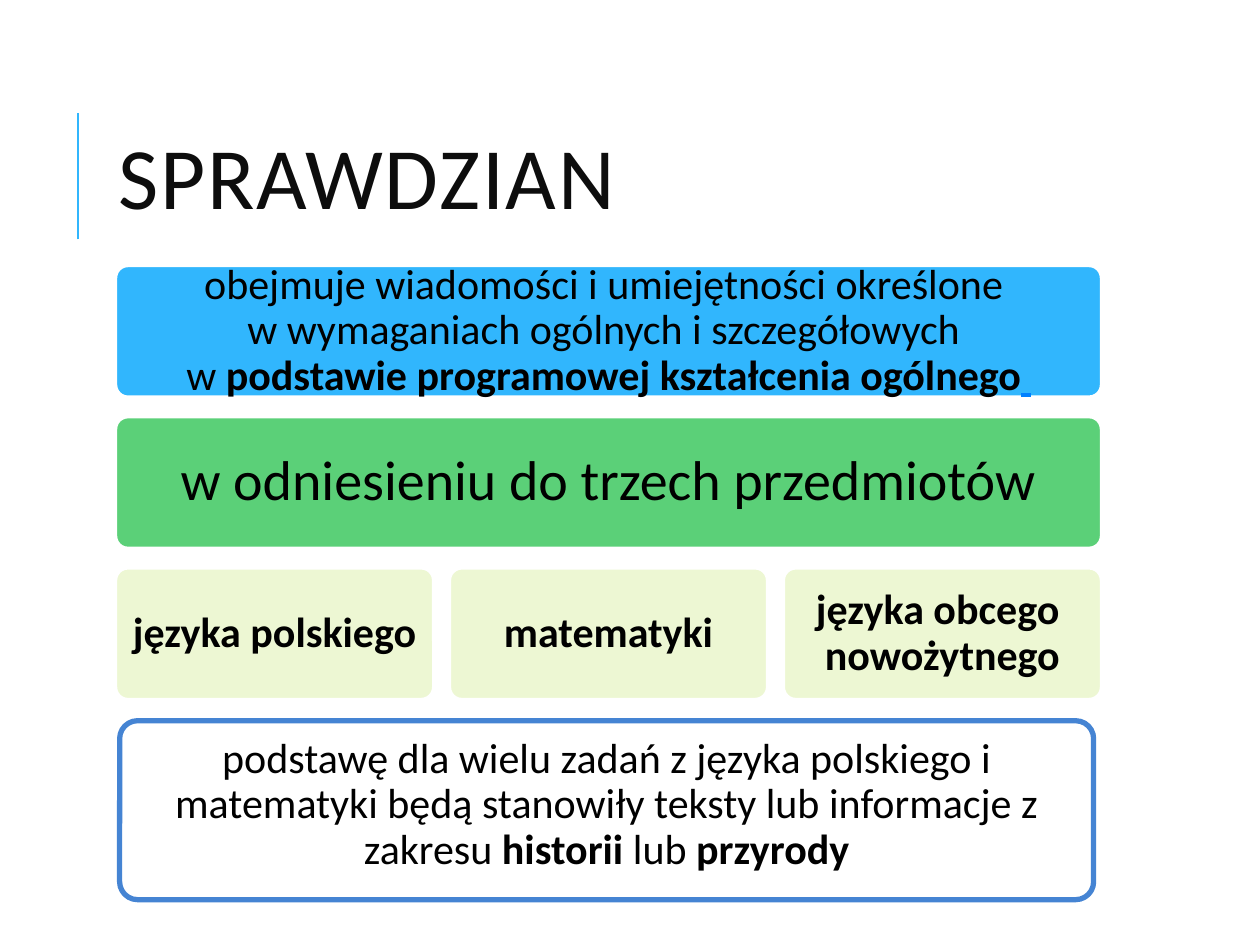
import pptx
import pptx.dml.color
import pptx.enum.shapes
import pptx.enum.text
import pptx.oxml
import pptx.oxml.ns
import pptx.util

COLORS = {
    "accent": "31B6FD", "green": "5BD078", "lime": "EDF7D3", "frame": "4584D3",
    "white": "FFFFFF", "black": "000000", "title": "0D0D0D", "link": "0080FF",
}

# Grid of the cards, in inches
GRID_LEFT, GRID_TOP, GRID_WIDTH = 0.91, 2.1, 7.84
COLUMNS, COLUMN_GAP = 3, 0.11
COLUMN_WIDTH = (GRID_WIDTH - (COLUMNS - 1) * COLUMN_GAP) / COLUMNS
ROW_HEIGHT, ROW_PITCH = 1.06, 1.2


def inches(*lengths):
    return [pptx.util.Inches(length) for length in lengths]


def color(name):
    return pptx.dml.color.RGBColor.from_string(COLORS[name])


def grid_cell(row, column=0, span=1):
    """Return left, top, width and height of a cell."""
    left = GRID_LEFT + column * (COLUMN_WIDTH + COLUMN_GAP)
    width = span * COLUMN_WIDTH + (span - 1) * COLUMN_GAP
    return left, GRID_TOP + row * ROW_PITCH, width, ROW_HEIGHT


def set_attributes(target, values):
    for name, value in values.items():
        setattr(target, name, value)


def add_run(paragraph, text, text_color="black", **font_values):
    run = paragraph.add_run()
    run.text = text
    set_attributes(run.font, {"name": "Calibri", **font_values})
    run.font.color.rgb = color(text_color)
    return run


def prepare_frame(shape, margins):
    """Set up a wrapped, vertically centred frame; margins: left, top, right, bottom."""
    names = ("margin_left", "margin_top", "margin_right", "margin_bottom")
    set_attributes(shape.text_frame, {
        "word_wrap": True,
        "vertical_anchor": pptx.enum.text.MSO_ANCHOR.MIDDLE,
        **dict(zip(names, inches(*margins))),
    })
    return shape.text_frame.paragraphs[0]


def add_card(slide, box, fill, lines, size=24, margins=(0.1,) * 4, border="white"):
    """Add a rounded card; each line is a list of (text, run format) pairs."""
    shape = slide.shapes.add_shape(
        pptx.enum.shapes.MSO_SHAPE.ROUNDED_RECTANGLE, *inches(*box))
    shape.adjustments[0] = 0.1
    shape.shadow.inherit = False
    shape.fill.solid()
    shape.fill.fore_color.rgb = color(fill)
    shape.line.color.rgb = color(border)
    shape.line.width = pptx.util.Pt(3)

    paragraph = prepare_frame(shape, margins)
    set_attributes(paragraph, {
        "alignment": pptx.enum.text.PP_ALIGN.CENTER, "line_spacing": 0.9})
    for index, line in enumerate(lines):
        if index:
            paragraph.add_line_break()
        for text, run_format in line:
            add_run(paragraph, text, size=pptx.util.Pt(size), **run_format)


def add_title(slide, text):
    # Accent line beside the title
    line = slide.shapes.add_connector(
        pptx.enum.shapes.MSO_CONNECTOR.STRAIGHT, *inches(0.62, 1.9, 0.62, 0.9))
    line.line.color.rgb = color("accent")
    line.line.width = pptx.util.Pt(1.5)
    line._element.spPr.append(pptx.oxml.parse_xml(
        f"<a:effectLst {pptx.oxml.ns.nsdecls('a')}/>"))

    # Title text with letter spacing of one point
    box = slide.shapes.add_textbox(*inches(0.84, 0.64, 7.97, 1.64))
    paragraph = prepare_frame(box, (0.1, 0.05, 0.1, 0.05))
    paragraph.line_spacing = 0.8
    run = add_run(paragraph, text, "title", size=pptx.util.Pt(50))
    run._r.get_or_add_rPr().set("spc", "100")


def main():
    presentation = pptx.Presentation()
    presentation.slide_width, presentation.slide_height = inches(10, 7.5)
    slide = presentation.slides.add_slide(presentation.slide_layouts[6])
    plain, bold = {}, {"bold": True}

    add_title(slide, "SPRAWDZIAN")

    # Full-width rows
    add_card(slide, grid_cell(0, span=COLUMNS), "accent", [
        [("obejmuje wiadomości i umiejętności określone ", plain)],
        [("w wymaganiach ogólnych i szczegółowych ", plain)],
        [("w ", plain), ("podstawie programowej kształcenia ogólnego", bold),
         (" ", {"bold": True, "underline": True, "text_color": "link"})],
    ])
    add_card(slide, grid_cell(1, span=COLUMNS), "green",
             [[("w odniesieniu do trzech przedmiotów", plain)]],
             size=32, margins=(0.13,) * 4)

    # Three subjects
    subjects = [["języka polskiego"], ["matematyki"], ["języka obcego ", "nowożytnego"]]
    for column, lines in enumerate(subjects):
        add_card(slide, grid_cell(2, column), "lime", [[(text, bold)] for text in lines])

    # Framed remark
    add_card(slide, (0.95, 5.72, 7.73, 1.42), "white", [[
        ("podstawę dla wielu zadań z języka polskiego i matematyki będą stanowiły "
         "teksty lub informacje z zakresu ", plain),
        ("historii", bold), (" lub ", plain), ("przyrody", bold),
    ]], margins=(0.18, 0.01, 0.18, 0.09), border="frame")

    presentation.save("out.pptx")


if __name__ == "__main__":
    main()
